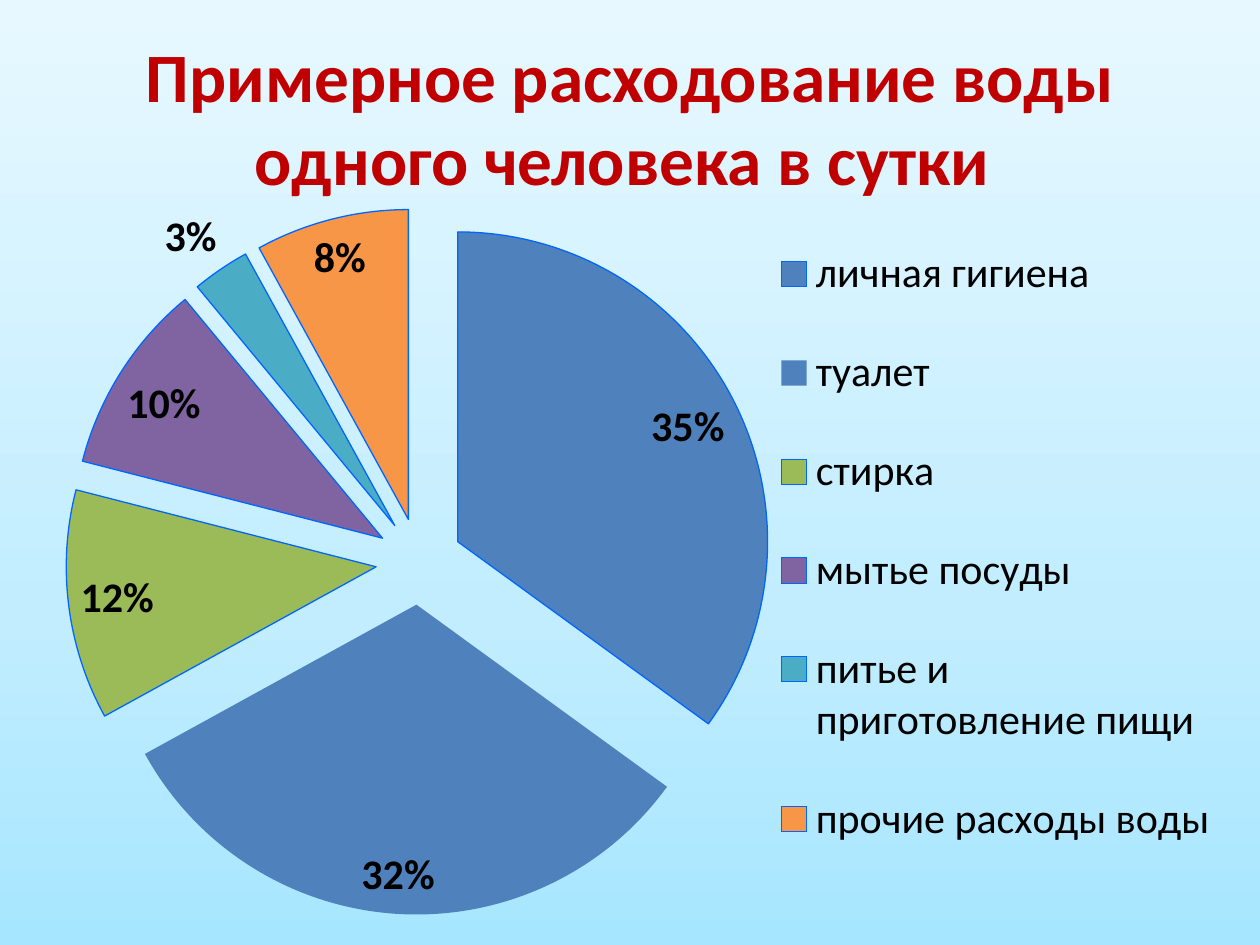
from copy import deepcopy

from lxml.etree import SubElement
from pptx import Presentation
from pptx.chart.data import CategoryChartData as Data
from pptx.dml.color import RGBColor as RGB
from pptx.enum.chart import XL_CHART_TYPE as Kind
from pptx.enum.chart import XL_LABEL_POSITION as Spot
from pptx.enum.chart import XL_LEGEND_POSITION as Side
from pptx.enum.text import MSO_ANCHOR as Anchor
from pptx.enum.text import PP_ALIGN as Align
from pptx.oxml.ns import qn
from pptx.util import Inches, Pt

FONT = "Calibri"
RED = RGB(0xC0, 0x00, 0x00)
BLACK = RGB(0x00, 0x00, 0x00)
EDGE = RGB(0x00, 0x66, 0xFF)
BLUE = RGB(0x4F, 0x81, 0xBD)
GREEN = RGB(0x9B, 0xBB, 0x59)
PURPLE = RGB(0x80, 0x64, 0xA2)
TEAL = RGB(0x4B, 0xAC, 0xC6)
ORANGE = RGB(0xF7, 0x96, 0x46)
SKY = [
    (0, RGB(0xA7, 0xE6, 0xFF)),
    (0.35, RGB(0xC1, 0xED, 0xFF)),
    (1, RGB(0xE7, 0xF8, 0xFF)),
]
USES = [
    ("личная гигиена", 35, BLUE),
    ("туалет", 32, BLUE),
    ("стирка", 12, GREEN),
    ("мытье посуды", 10, PURPLE),
    ("питье и приготовление пищи", 3, TEAL),
    ("прочие расходы воды", 8, ORANGE),
]
BARE = "туалет"


def paint_sky(slide):
    """Fill the background with the three-stop gradient."""
    fill = slide.background.fill
    fill.gradient()
    fill.gradient_angle = 90
    stops = slide.element.find(".//" + qn("a:gsLst"))
    stops.append(deepcopy(stops[0]))
    for stop, (place, color) in zip(fill.gradient_stops, SKY):
        stop.position = place
        stop.color.rgb = color


def add_title(slide, box, text):
    """Place and format the title in its box."""
    title = slide.shapes.title
    title.left, title.top, title.width, title.height = box
    frame = title.text_frame
    frame.text = text
    frame.word_wrap = True
    frame.vertical_anchor = Anchor.MIDDLE
    para = frame.paragraphs[0]
    para.alignment = Align.CENTER
    font = para.font
    font.name, font.size, font.bold = FONT, Pt(39.6), True
    font.color.rgb = RED


def set_font(font, size, bold=False):
    """Give chart text its font, size and colour."""
    font.name, font.size, font.bold = FONT, Pt(size), bold
    font.color.rgb = BLACK


def set_layout(part, box, inner=False):
    """Fix a chart part at fractions of the chart area."""
    layout = part.find(qn("c:layout"))
    if layout is None:
        layout = SubElement(part, qn("c:layout"))
        part.insert(1 if part.tag == qn("c:legend") else 0, layout)
    manual = SubElement(layout, qn("c:manualLayout"))
    items = [("layoutTarget", "inner")] if inner else []
    items += [("xMode", "edge"), ("yMode", "edge")]
    items += zip("xywh", map(str, box))
    for name, value in items:
        SubElement(manual, qn("c:" + name)).set("val", value)


def add_pie(slide, box):
    """Draw the exploded pie with its legend in the box."""
    data = Data()
    data.categories = [name for name, _, _ in USES]
    data.add_series("Series 1", [value for _, value, _ in USES])
    chart = slide.shapes.add_chart(Kind.PIE, *box, data).chart
    chart.has_title = False
    set_font(chart.font, 18)

    chart.has_legend = True
    legend = chart.legend
    legend.position = Side.RIGHT
    legend.include_in_layout = False
    set_font(legend.font, 24)

    plot = chart.plots[0]
    plot.vary_by_categories = True
    series = plot.series[0]
    for i, (name, _, color) in enumerate(USES):
        shape = series.points[i].format
        shape.fill.solid()
        shape.fill.fore_color.rgb = color
        if name == BARE:
            shape.line.fill.background()
        else:
            shape.line.color.rgb = EDGE
            shape.line.width = Pt(0.75)
    root = chart.element
    first = root.find(".//" + qn("c:dPt"))
    first.addprevious(first.makeelement(qn("c:explosion"), {"val": "14"}))

    labels = series.data_labels
    labels.show_percentage = True
    labels.show_value = False
    labels.number_format = "0%"
    labels.number_format_is_linked = False
    labels.position = Spot.BEST_FIT
    set_font(labels.font, 24, True)

    set_layout(root.find(".//" + qn("c:plotArea")), (0, 0.03, 0.65, 0.97), True)
    set_layout(root.find(".//" + qn("c:legend")), (0.62, 0.02, 0.37, 0.95))


def main():
    """Build the slide and save it."""
    deck = Presentation()
    deck.slide_width, deck.slide_height = Inches(10), Inches(7.5)
    slide = deck.slides.add_slide(deck.slide_layouts[5])
    paint_sky(slide)
    add_title(
        slide,
        [Inches(n) for n in (0.5, 0.3, 9, 1.25)],
        "Примерное расходование воды одного человека в сутки ",
    )
    add_pie(slide, [Inches(n) for n in (0.23, 1.48, 9.53, 5.78)])
    deck.save("out.pptx")


if __name__ == "__main__":
    main()
